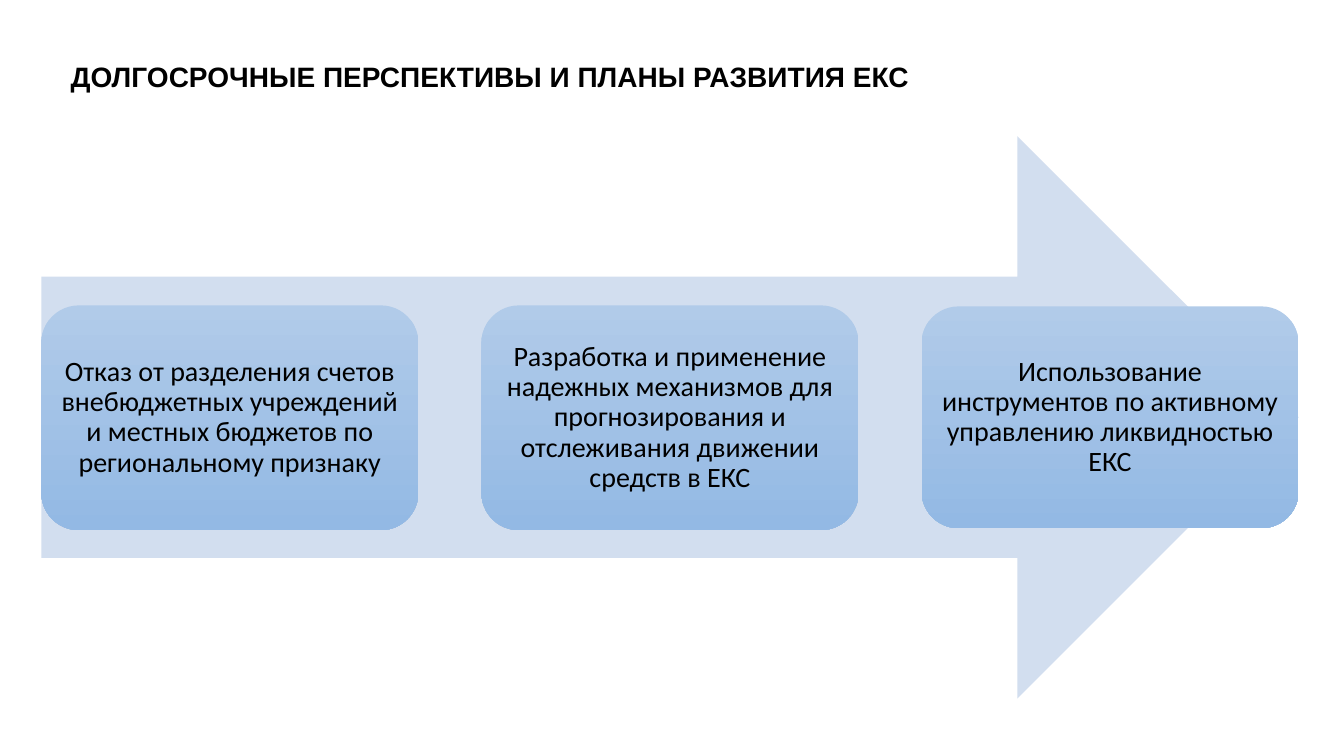
from dataclasses import dataclass
from pptx import Presentation
from pptx.dml.color import RGBColor
from pptx.enum.shapes import MSO_SHAPE as Kind
from pptx.enum.text import MSO_ANCHOR as Anchor, MSO_AUTO_SIZE as Fit, PP_ALIGN as Align
from pptx.shapes.autoshape import Shape
from pptx.slide import Slide
from pptx.util import Inches, Pt


@dataclass
class Step:
    text: str
    top: float
    high: float


LEFT, WIDE, GAP = 0.41, 3.74, 0.625
STEPS = [
    Step("Отказ от разделения счетов внебюджетных учреждений и местных бюджетов по региональному признаку", 3.03, 2.23),
    Step("Разработка и применение надежных механизмов для прогнозирования и отслеживания движении средств в ЕКС", 3.03, 2.23),
    Step("Использование инструментов по активному управлению ликвидностью ЕКС", 3.04, 2.2),
]


def color(code: str) -> RGBColor:
    return RGBColor.from_string(code)


def assign(item: object, values: dict) -> None:
    for name, value in values.items():
        setattr(item, name, value)


def write(shape: Shape, text: str, font: str, bold: bool, frame: dict, para: dict) -> None:
    body = shape.text_frame
    body.text = text
    assign(body, {"word_wrap": True, "auto_size": Fit.NONE, **frame})
    line = body.paragraphs[0]
    assign(line, para)
    assign(line.runs[0].font, {"name": font, "size": Pt(20), "bold": bold})
    line.runs[0].font.color.rgb = color("000000")


def add_form(slide: Slide, kind: Kind, left: float, top: float, wide: float, high: float) -> Shape:
    shape = slide.shapes.add_shape(kind, Inches(left), Inches(top), Inches(wide), Inches(high))
    shape.shadow.inherit = False
    shape.line.fill.background()
    return shape


def add_step(slide: Slide, step: Step, left: float) -> None:
    box = add_form(slide, Kind.ROUNDED_RECTANGLE, left, step.top, WIDE, step.high)
    box.fill.gradient()
    box.fill.gradient_angle = 270
    for stop, code in zip(box.fill.gradient_stops, ("B1CBE9", "93B9E4")):
        stop.color.rgb = color(code)
        stop.position = 0 if code == "B1CBE9" else 1
    sides = ("left", "top", "right", "bottom")
    frame = {f"margin_{side}": Inches(0.08) for side in sides}
    write(box, step.text, "Calibri", False, {"vertical_anchor": Anchor.MIDDLE, **frame},
          {"alignment": Align.CENTER, "line_spacing": 0.9})


def main() -> None:
    deck = Presentation()
    assign(deck, {"slide_width": Inches(13.33), "slide_height": Inches(7.5)})
    slide = deck.slides.add_slide(deck.slide_layouts[5])
    title = slide.shapes.title
    assign(title, {"left": Inches(0.6), "top": Inches(0.54),
                   "width": Inches(12.08), "height": Inches(0.57)})
    write(title, "ДОЛГОСРОЧНЫЕ ПЕРСПЕКТИВЫ И ПЛАНЫ РАЗВИТИЯ ЕКС", "Arial", True,
          {"vertical_anchor": Anchor.TOP}, {"alignment": Align.LEFT})
    arrow = add_form(slide, Kind.RIGHT_ARROW, LEFT, 1.35, 12.47, 5.58)
    arrow.fill.solid()
    arrow.fill.fore_color.rgb = color("D2DEEF")
    for index, step in enumerate(STEPS):
        add_step(slide, step, LEFT + index * (WIDE + GAP))
    deck.save("out.pptx")


if __name__ == "__main__":
    main()
